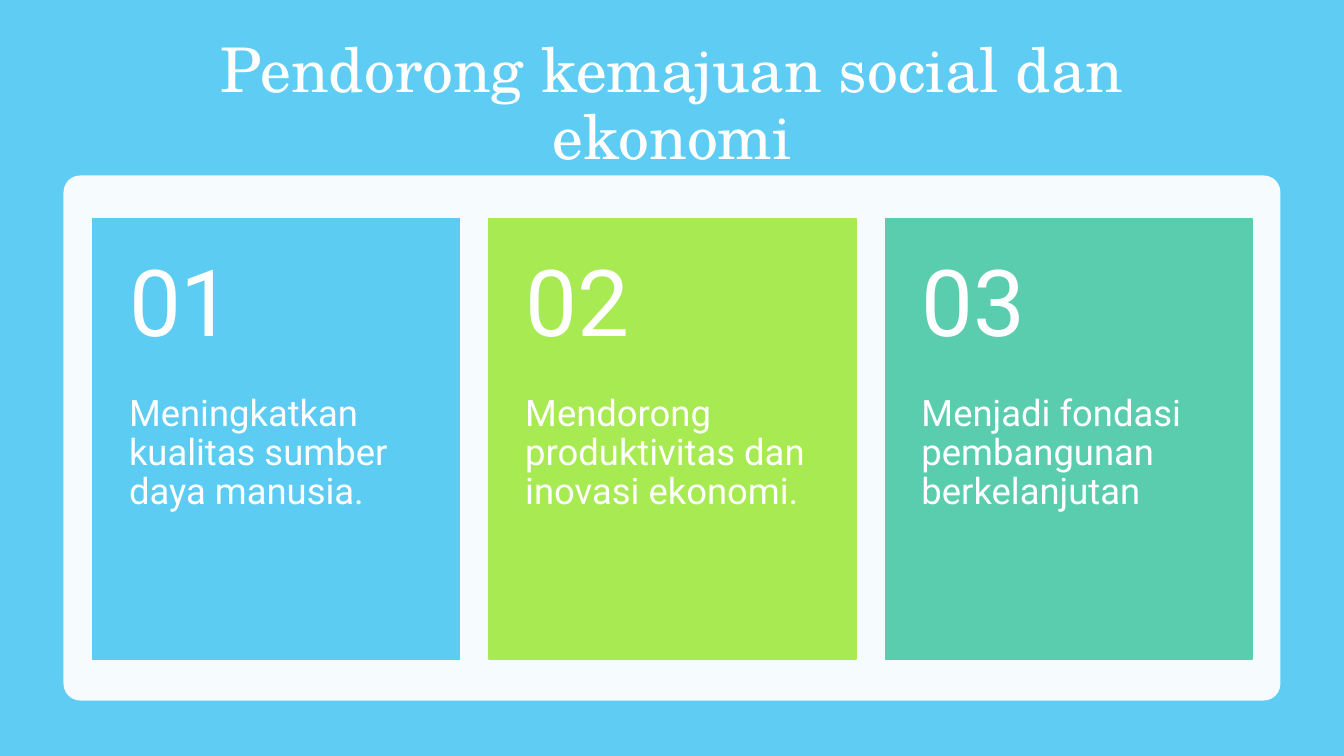
from lxml import etree
from pptx import Presentation
from pptx.dml.color import RGBColor
from pptx.enum.shapes import MSO_SHAPE
from pptx.enum.text import MSO_ANCHOR, PP_ALIGN
from pptx.oxml.ns import qn
from pptx.util import Inches, Pt

RECTANGLE = MSO_SHAPE.RECTANGLE
ROUNDED = MSO_SHAPE.ROUNDED_RECTANGLE
TOP, MIDDLE = MSO_ANCHOR.TOP, MSO_ANCHOR.MIDDLE
LEFT, CENTER = PP_ALIGN.LEFT, PP_ALIGN.CENTER

WIDTH, HEIGHT = 13.33, 7.5
TITLE_FONT, BODY_FONT = "TeX Gyre Schola", "Roboto"
COLORS = {
    "sky": "5ECCF3",
    "white": "FFFFFF",
    "blue": "5DCCF3",
    "lime": "A7EA52",
    "teal": "5BCDAF",
}
TITLE = "Pendorong kemajuan social dan ekonomi"
CARDS = [
    ("01", "Meningkatkan kualitas sumber daya manusia.", "blue"),
    ("02", "Mendorong produktivitas dan inovasi ekonomi.", "lime"),
    ("03", "Menjadi fondasi pembangunan berkelanjutan", "teal"),
]
TITLE_BOX = (0.92, 0.5, 11.5, 1.1)
PANEL_BOX = (0.63, 1.74, 12.07, 5.21)
CARDS_BOX = (0.92, 2.17, 11.5, 4.37)
CARD_GAP = 0.29
NUMBER_SHARE = 0.4
INSET = 0.36


def add_block(page, kind, box, color, outlined=False):
    block = page.shapes.add_shape(kind, *map(Inches, box))
    block.shadow.inherit = False
    block.fill.solid()
    block.fill.fore_color.rgb = RGBColor.from_string(COLORS[color])
    if outlined:
        block.line.color.rgb = RGBColor.from_string(COLORS[color])
        block.line.width = Pt(1)
    else:
        block.line.fill.background()
    return block


def add_text(page, box, text, font, size, insets, anchor=TOP, align=LEFT):
    frame = page.shapes.add_textbox(*map(Inches, box)).text_frame
    frame.word_wrap = True
    frame.vertical_anchor = anchor
    (frame.margin_left, frame.margin_top,
     frame.margin_right, frame.margin_bottom) = map(Inches, insets)
    frame.text = text
    para = frame.paragraphs[0]
    para.alignment = align
    para.line_spacing = 0.9
    span = para.runs[0]
    span.font.name = font
    span.font.size = Pt(size)
    span.font.color.rgb = RGBColor.from_string(COLORS["white"])


def add_panel(page, box):
    panel = add_block(page, ROUNDED, box, "white")
    panel.adjustments[0] = 0.032
    color = panel.fill._xPr.find(qn("a:solidFill"))[0]
    etree.SubElement(color, qn("a:alpha")).set("val", "95000")


def add_card(page, box, number, text, color):
    left, top, width, height = box
    number_height = height * NUMBER_SHARE
    add_block(page, RECTANGLE, box, color, outlined=True)
    add_text(page, (left, top + number_height, width, height - number_height),
             text, BODY_FONT, 26, (INSET, 0, INSET, INSET))
    add_text(page, (left, top, width, number_height), number, BODY_FONT, 66,
             (INSET, INSET / 2, INSET, INSET / 2), MIDDLE)


def add_cards(page, box):
    left, top, width, height = box
    card_width = (width - CARD_GAP * (len(CARDS) - 1)) / len(CARDS)
    for column, card in enumerate(CARDS):
        card_left = left + column * (card_width + CARD_GAP)
        add_card(page, (card_left, top, card_width, height), *card)


def main():
    deck = Presentation()
    deck.slide_width, deck.slide_height = Inches(WIDTH), Inches(HEIGHT)
    page = deck.slides.add_slide(deck.slide_layouts[6])
    add_block(page, RECTANGLE, (0, 0, WIDTH, HEIGHT), "sky")
    add_text(page, TITLE_BOX, TITLE, TITLE_FONT, 44,
             (0.1, 0.05, 0.1, 0.05), MIDDLE, CENTER)
    add_panel(page, PANEL_BOX)
    add_cards(page, CARDS_BOX)
    deck.save("out.pptx")


if __name__ == "__main__":
    main()
